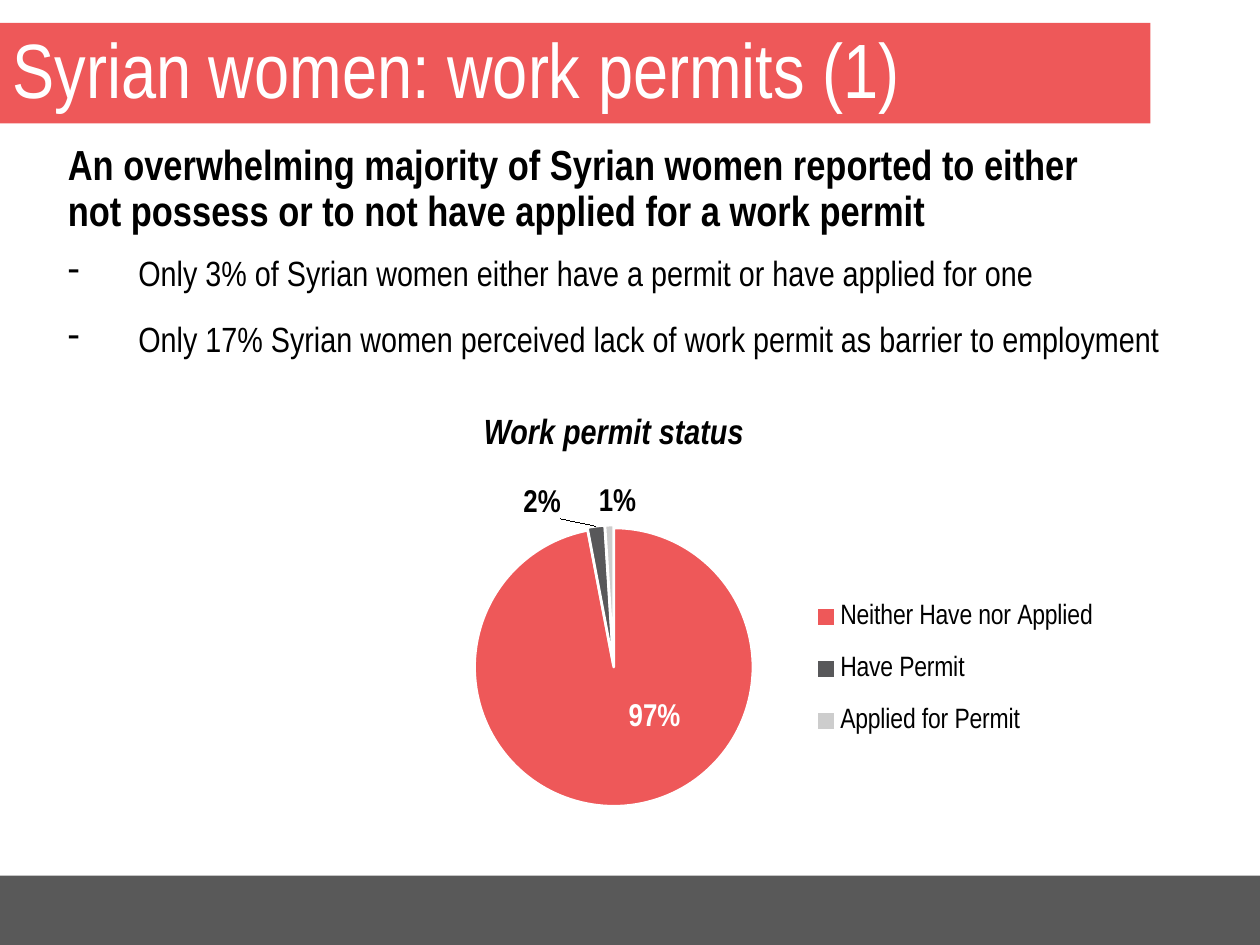
from lxml import etree
from pptx import Presentation
from pptx.chart.data import CategoryChartData
from pptx.dml.color import RGBColor
from pptx.enum.chart import XL_CHART_TYPE as ChartType
from pptx.enum.chart import XL_LABEL_POSITION as LabelPos
from pptx.enum.chart import XL_LEGEND_POSITION as LegendPos
from pptx.enum.shapes import MSO_SHAPE as Shape
from pptx.enum.text import MSO_ANCHOR as Anchor
from pptx.enum.text import MSO_AUTO_SIZE as AutoSize
from pptx.enum.text import PP_ALIGN as Align
from pptx.oxml import parse_xml
from pptx.oxml.ns import qn
from pptx.util import Cm, Pt

# Content
TITLE = "Syrian women: work permits (1)"
LEAD = ("An overwhelming majority of Syrian women reported to either "
        "not possess or to not have applied for a work permit")
BULLETS = [
    "Only 3% of Syrian women either have a permit or have applied for one",
    "Only 17% Syrian women perceived lack of work permit as barrier to employment",
]
CHART_TITLE = "Work permit status"
COLORS = {"coral": "EE5859", "grey": "595959", "dark": "58585A",
          "light": "CDCDCD", "black": "000000", "white": "FFFFFF"}
# name, share, slice colour, label colour, label position, label shift, explosion
SLICES = [
    ("Neither Have nor Applied", 0.97, "coral", "white", LabelPos.CENTER, (0.04, -0.04), 0),
    ("Have Permit", 0.02, "dark", "black", LabelPos.OUTSIDE_END, (-0.04, 0), 2),
    ("Applied for Permit", 0.01, "light", "black", LabelPos.OUTSIDE_END, (0.01, 0), 2),
]
PLOT_BOX = (0.239, 0.147, 0.325, 0.627)
LEGEND_BOX = (0.62, 0.26, 0.36, 0.41)
FONT = "Arial Narrow"


def rgb(name):
    return RGBColor.from_string(COLORS[name])


def style(font, size, color="black", bold=False, italic=False):
    font.name, font.size = FONT, Pt(size)
    font.bold, font.italic = bold, italic
    font.color.rgb = rgb(color)


def fill_plain(sp, color):
    sp.fill.solid()
    sp.fill.fore_color.rgb = rgb(color)
    sp.line.fill.background()


def add_text(slide, box, lines, size, bullet=None, align=None, spacing=None, **look):
    tf = slide.shapes.add_textbox(*map(Cm, box)).text_frame
    tf.word_wrap = True
    for i, line in enumerate(lines):
        p = tf.paragraphs[0] if i == 0 else tf.add_paragraph()
        p.text = line
        p.alignment, p.line_spacing = align, spacing
        if i:
            p.space_before = Pt(10)
        if len(lines) > 1:
            p.space_after = Pt(6)
        if bullet:
            pPr = p._p.get_or_add_pPr()
            pPr.set("marL", str(Cm(1.42)))
            pPr.set("indent", str(-Cm(1.42)))
            etree.SubElement(pPr, qn("a:buChar")).set("char", bullet)
        style(p.runs[0].font, size, **look)


def manual_layout(keys, values, inner=False, edge=False):
    target = '<c:layoutTarget val="inner"/>' if inner else ""
    modes = '<c:xMode val="edge"/><c:yMode val="edge"/>' if edge else ""
    parts = "".join(f'<c:{k} val="{v}"/>' for k, v in zip(keys, values))
    ns = "http://schemas.openxmlformats.org/drawingml/2006/chart"
    return parse_xml(f'<c:layout xmlns:c="{ns}"><c:manualLayout>{target}{modes}{parts}'
                     "</c:manualLayout></c:layout>")


def add_pie(slide):
    data = CategoryChartData(number_format="0%")
    data.categories = [row[0] for row in SLICES]
    data.add_series("Series 1", [row[1] for row in SLICES])
    box = map(Cm, (5.44, 9.32, 17.27, 8.97))
    chart = slide.shapes.add_chart(ChartType.PIE, *box, data).chart
    chart.has_title = False
    style(chart.font, 10)

    # Legend
    chart.has_legend = True
    legend = chart.legend
    legend.position = LegendPos.RIGHT
    legend.include_in_layout = False
    style(legend.font, 16)
    legend_pos = legend._element.find(qn("c:legendPos"))
    legend_pos.addnext(manual_layout("xywh", LEGEND_BOX, edge=True))

    # Plot area
    plot = chart.plots[0]
    plot.vary_by_categories = True
    area = plot._element.getparent()
    for old in area.findall(qn("c:layout")):
        area.remove(old)
    area.insert(0, manual_layout("xywh", PLOT_BOX, inner=True, edge=True))

    # Slices and their labels
    series = plot.series[0]
    labels = series.data_labels
    labels.show_value = True
    labels.number_format, labels.number_format_is_linked = "0%", False
    style(labels.font, 18, "white", bold=True)
    for i, (_, _, color, label_color, position, shift, explosion) in enumerate(SLICES):
        point = series.points[i]
        fmt = point.format
        fmt.fill.solid()
        fmt.fill.fore_color.rgb = rgb(color)
        fmt.line.color.rgb = rgb("white")
        fmt.line.width = Pt(1.5)
        label = point.data_label
        style(label.font, 18, label_color, bold=True)
        label.position = position
        dLbl = series._element.findall(".//" + qn("c:dLbl"))[i]
        dLbl.find(qn("c:idx")).addnext(manual_layout("xy", shift))
        if explosion:
            dPt = series._element.findall(qn("c:dPt"))[i]
            tag = etree.Element(qn("c:explosion"), val=str(explosion))
            dPt.find(qn("c:spPr")).addprevious(tag)


def main():
    prs = Presentation()
    prs.slide_width, prs.slide_height = Cm(25.4), Cm(19.05)
    slide = prs.slides.add_slide(prs.slide_layouts[5])

    # Footer band
    bar = slide.shapes.add_shape(Shape.RECTANGLE, 0, Cm(17.65), prs.slide_width, Cm(1.4))
    bar.shadow.inherit = False
    fill_plain(bar, "grey")

    # Title band
    title = slide.shapes.title
    title.left, title.top, title.width, title.height = map(Cm, (0, 0.46, 23.19, 2.03))
    fill_plain(title, "coral")
    tf = title.text_frame
    tf.text = TITLE
    tf.auto_size = AutoSize.NONE
    tf.vertical_anchor = Anchor.MIDDLE
    p = tf.paragraphs[0]
    p.alignment, p.line_spacing = Align.LEFT, 0.9
    style(p.runs[0].font, 44, "white")

    # Message, chart and chart heading
    add_text(slide, (1.12, 2.79, 22.1, 1.93), [LEAD], 24, spacing=0.9, bold=True)
    add_pie(slide)
    add_text(slide, (1.12, 5.05, 23.55, 3.94), BULLETS, 20, bullet="-", spacing=0.9)
    add_text(slide, (5.44, 8.13, 13.87, 1.12), [CHART_TITLE], 20,
             align=Align.CENTER, bold=True, italic=True)
    prs.save("out.pptx")


if __name__ == "__main__":
    main()
